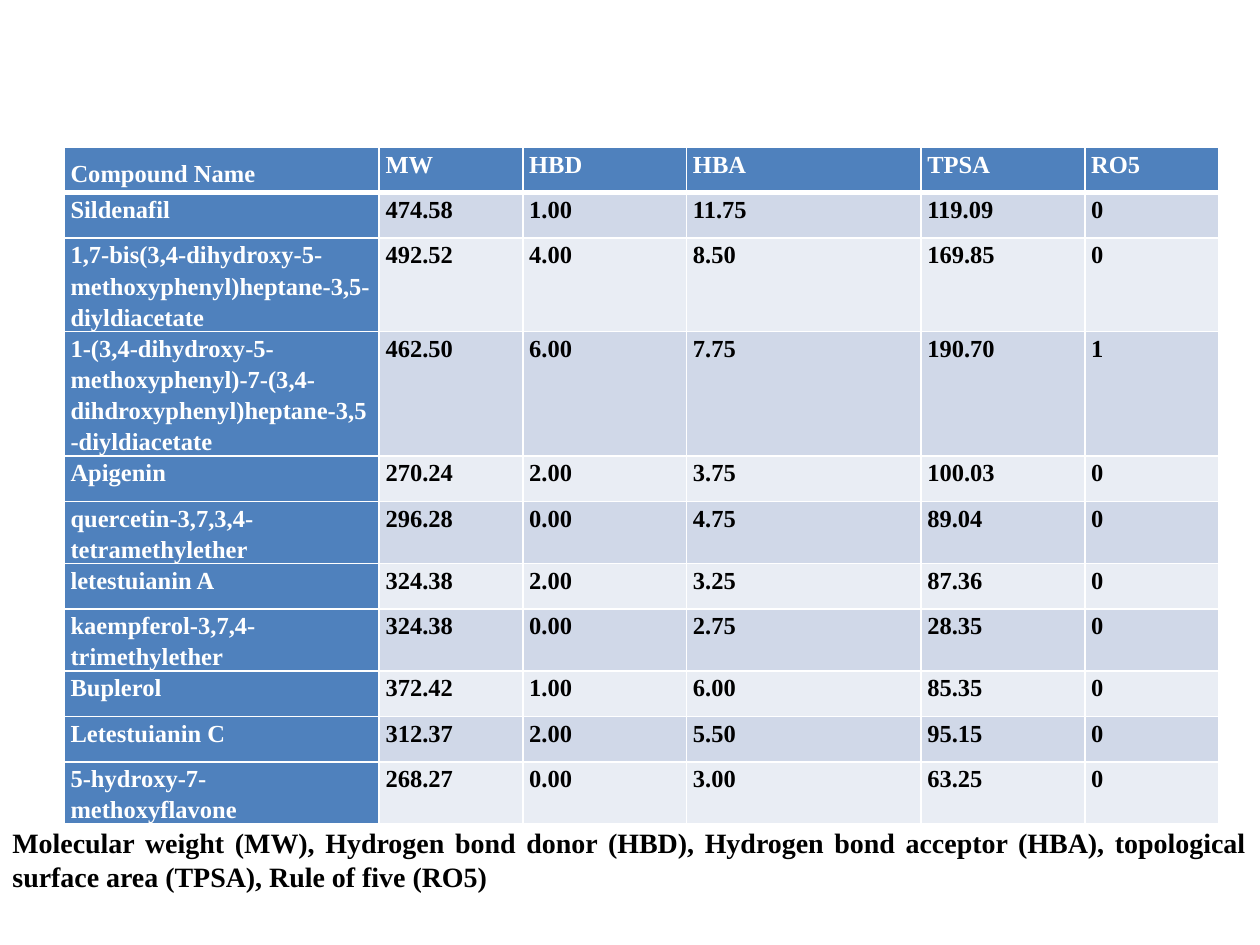
from lxml.etree import SubElement
from pptx import Presentation
from pptx.dml.color import RGBColor
from pptx.enum.text import MSO_ANCHOR as Anchor, MSO_AUTO_SIZE as AutoSize, PP_ALIGN as Align
from pptx.oxml.ns import qn
from pptx.util import Inches, Pt

FONT = "Times New Roman"
WHITE, BLACK, BLUE = "FFFFFF", "000000", "4F81BD"
BANDS = ["D0D8E8", "E9EDF4"]
COLUMN_WIDTHS = [2.5, 1.14, 1.3, 1.86, 1.3, 1.06]
ROW_HEIGHTS = [0.36, 0.36, 0.67, 0.89, 0.36, 0.45, 0.36, 0.45, 0.36, 0.36, 0.36]
COMPOUNDS = [
    ["Compound Name", "MW", "HBD", "HBA", "TPSA", "RO5"],
    ["Sildenafil", "474.58", "1.00", "11.75", "119.09", "0"],
    ["1,7-bis(3,4-dihydroxy-5-methoxyphenyl)heptane-3,5-diyldiacetate",
     "492.52", "4.00", "8.50", "169.85", "0"],
    ["1-(3,4-dihydroxy-5-methoxyphenyl)-7-(3,4-dihdroxyphenyl)heptane-3,5-diyldiacetate",
     "462.50", "6.00", "7.75", "190.70", "1"],
    ["Apigenin", "270.24", "2.00", "3.75", "100.03", "0"],
    ["quercetin-3,7,3,4-tetramethylether", "296.28", "0.00", "4.75", "89.04", "0"],
    ["letestuianin A", "324.38", "2.00", "3.25", "87.36", "0"],
    ["kaempferol-3,7,4-trimethylether", "324.38", "0.00", "2.75", "28.35", "0"],
    ["Buplerol", "372.42", "1.00", "6.00", "85.35", "0"],
    ["Letestuianin C", "312.37", "2.00", "5.50", "95.15", "0"],
    ["5-hydroxy-7-methoxyflavone", "268.27", "0.00", "3.00", "63.25", "0"],
]
ABBREVIATIONS = (
    "Molecular weight (MW), Hydrogen bond donor (HBD), Hydrogen bond acceptor (HBA), "
    "topological surface area (TPSA), Rule of five (RO5)"
)


def rgb(color):
    return RGBColor.from_string(color)


def write_text(frame, text, size=14, color=BLACK, line_spacing=None):
    paragraph = frame.paragraphs[0]
    paragraph.alignment = Align.JUSTIFY
    paragraph.line_spacing = line_spacing
    run = paragraph.add_run()
    run.text = text
    run.font.name = FONT
    run.font.size = Pt(size)
    run.font.bold = True
    run.font.color.rgb = rgb(color)


def set_borders(cell, bottom_width):
    properties = cell._tc.get_or_add_tcPr()
    for side, width in {"L": 1, "R": 1, "T": 1, "B": bottom_width}.items():
        line = SubElement(properties, qn(f"a:ln{side}"), w=str(Pt(width)))
        fill = SubElement(line, qn("a:solidFill"))
        SubElement(fill, qn("a:srgbClr"), val=WHITE)


def format_cell(cell, text, row, column):
    is_heading = row == 0 or column == 0
    cell.margin_left = cell.margin_right = Inches(0.05)
    cell.margin_top = cell.margin_bottom = 0
    set_borders(cell, bottom_width=3 if row == 0 else 1)
    cell.fill.solid()
    cell.fill.fore_color.rgb = rgb(BLUE if is_heading else BANDS[(row - 1) % 2])
    write_text(cell.text_frame, text, color=WHITE if is_heading else BLACK,
               line_spacing=1.5 if row == column == 0 else 1.15)


def add_compound_table(slide, left, top, width, height):
    table = slide.shapes.add_table(
        len(COMPOUNDS), len(COLUMN_WIDTHS),
        Inches(left), Inches(top), Inches(width), Inches(height)).table
    table.first_col = True
    for column, column_width in zip(table.columns, COLUMN_WIDTHS):
        column.width = Inches(column_width)
    for row, row_height in zip(table.rows, ROW_HEIGHTS):
        row.height = Inches(row_height)
    for row, values in enumerate(COMPOUNDS):
        for column, text in enumerate(values):
            format_cell(table.cell(row, column), text, row, column)


def add_abbreviations(slide, left, top, width, height):
    box = slide.shapes.add_textbox(Inches(left), Inches(top), Inches(width), Inches(height))
    frame = box.text_frame
    frame.word_wrap = True
    frame.auto_size = AutoSize.SHAPE_TO_FIT_TEXT
    frame.vertical_anchor = Anchor.MIDDLE
    write_text(frame, ABBREVIATIONS, size=16)


def main():
    presentation = Presentation()
    presentation.slide_width = Inches(10)
    presentation.slide_height = Inches(7.5)
    slide = presentation.slides.add_slide(presentation.slide_layouts[6])
    add_compound_table(slide, 0.51, 1.17, 9.15, 5.38)
    add_abbreviations(slide, 0, 6.5, 9.99, 0.64)
    presentation.save("out.pptx")


if __name__ == "__main__":
    main()
